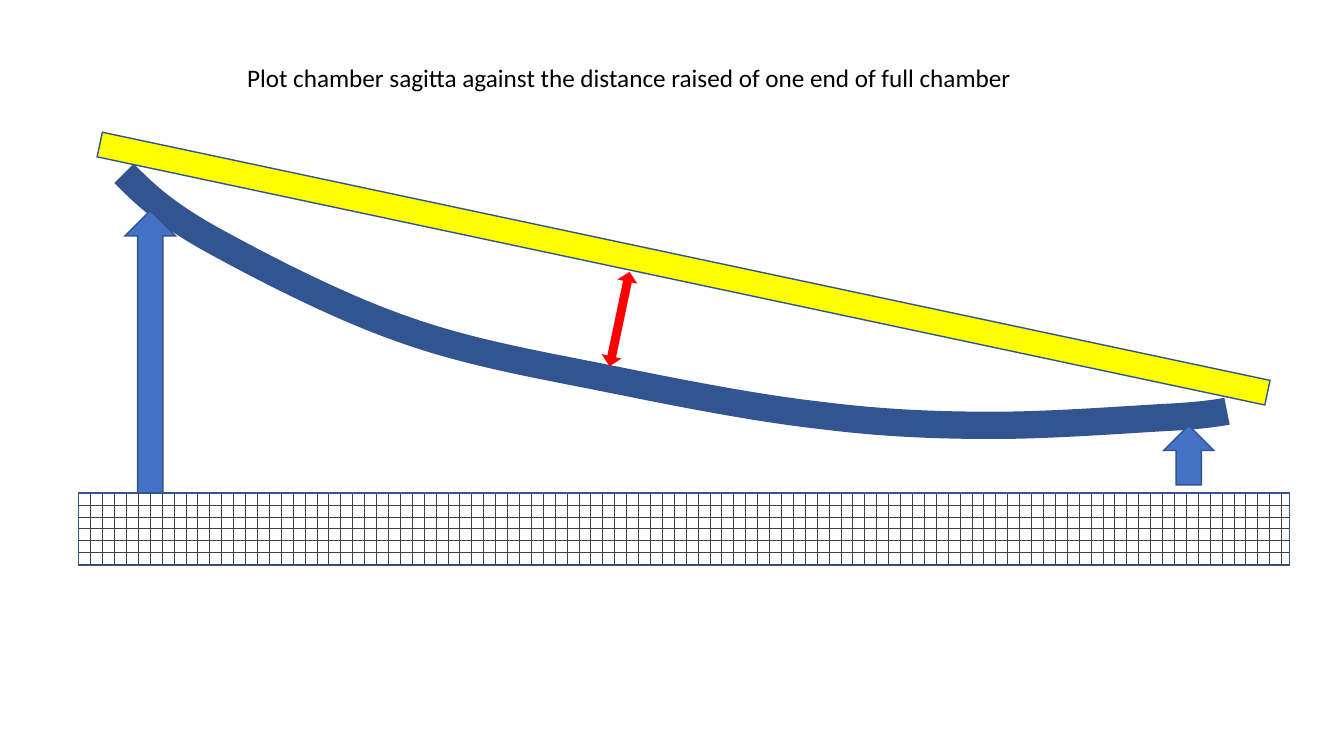
from dataclasses import dataclass

from lxml.etree import SubElement
from pptx import Presentation
from pptx.dml.color import RGBColor
from pptx.enum.dml import MSO_PATTERN
from pptx.enum.shapes import MSO_SHAPE
from pptx.enum.text import MSO_ANCHOR, MSO_AUTO_SIZE, PP_ALIGN
from pptx.oxml.ns import qn
from pptx.shapes.autoshape import Shape
from pptx.slide import Slide
from pptx.util import Inches, Pt

Point = tuple[float, float]


@dataclass(frozen=True)
class Theme:
    font: str = "Calibri"
    title_size: float = 18
    outline_width: float = 1
    gauge_width: float = 4.5
    chamber_width: float = 19.5
    text: RGBColor = RGBColor(0x00, 0x00, 0x00)
    outline: RGBColor = RGBColor(0x32, 0x54, 0x91)
    lift: RGBColor = RGBColor(0x44, 0x72, 0xC4)
    straightedge: RGBColor = RGBColor(0xFF, 0xFF, 0x00)
    gauge: RGBColor = RGBColor(0xFF, 0x00, 0x00)
    table_lines: RGBColor = RGBColor(0x40, 0x40, 0x40)
    table_ground: RGBColor = RGBColor(0xFF, 0xFF, 0xFF)


THEME = Theme()


@dataclass(frozen=True)
class Part:
    kind: MSO_SHAPE
    left: float
    top: float
    width: float
    height: float
    fill: RGBColor | None = None  # None gives the brick pattern
    rotation: float = 0
    line: RGBColor = THEME.outline
    line_width: float = THEME.outline_width


PARTS = [
    Part(MSO_SHAPE.DOWN_ARROW, 1.24, 2.09, 0.5, 3.09, THEME.lift, 180),
    Part(MSO_SHAPE.DOWN_ARROW, 11.54, 4.22, 0.5, 0.59, THEME.lift, 180),
    Part(MSO_SHAPE.RECTANGLE, 0.78, 4.89, 12.01, 0.72),
    Part(MSO_SHAPE.RECTANGLE, 0.86, 2.54, 11.84, 0.25, THEME.straightedge, 12),
    Part(MSO_SHAPE.LEFT_RIGHT_ARROW, 5.71, 3.14, 0.87, 0.05, THEME.gauge, 101.9,
         THEME.gauge, THEME.gauge_width),
]

CHAMBER_START: Point = (1.23, 1.72)
# Each row is one cubic curve: two control points, then the end point.
CHAMBER_CURVES: list[tuple[Point, Point, Point]] = [
    ((1.42, 1.91), (1.61, 2.1), (2.07, 2.36)),
    ((2.54, 2.62), (3.34, 3.04), (4.01, 3.27)),
    ((4.68, 3.51), (5.41, 3.63), (6.1, 3.77)),
    ((6.79, 3.91), (7.51, 4.05), (8.13, 4.12)),
    ((8.76, 4.2), (9.29, 4.22), (9.86, 4.22)),
    ((10.44, 4.22), (11.21, 4.16), (11.6, 4.14)),
    ((11.98, 4.12), (12.17, 4.08), (12.17, 4.08)),
]


def set_line(shape: Shape, color: RGBColor, width: float) -> None:
    """Give the shape a mitred outline and no shadow."""
    shape.shadow.inherit = False
    shape.line.color.rgb = color
    shape.line.width = Pt(width)
    outline = shape.element.spPr.find(qn("a:ln"))
    SubElement(outline, qn("a:miter"), lim="800000")


def bend_segments(shape: Shape) -> None:
    """Turn every three straight segments into one cubic curve."""
    outline = next(shape.element.iter(qn("a:path")))
    segments = outline.findall(qn("a:lnTo"))
    for index in range(0, len(segments), 3):
        curve = SubElement(outline, qn("a:cubicBezTo"))
        for segment in segments[index:index + 3]:
            curve.append(segment[0])
            outline.remove(segment)


def draw_chamber(page: Slide) -> None:
    start, *corners = [
        (Inches(x), Inches(y))
        for x, y in [CHAMBER_START, *(point for curve in CHAMBER_CURVES for point in curve)]
    ]
    builder = page.shapes.build_freeform(*start)
    builder.add_line_segments(corners, close=False)
    chamber = builder.convert_to_shape()
    bend_segments(chamber)
    chamber.fill.background()
    set_line(chamber, THEME.outline, THEME.chamber_width)


def draw_part(page: Slide, part: Part) -> None:
    shape = page.shapes.add_shape(part.kind, Inches(part.left), Inches(part.top),
                                  Inches(part.width), Inches(part.height))
    shape.rotation = part.rotation
    if part.fill is None:
        shape.fill.patterned()
        shape.fill.pattern = MSO_PATTERN.HORIZONTAL_BRICK
        shape.fill.fore_color.rgb = THEME.table_lines
        shape.fill.back_color.rgb = THEME.table_ground
    else:
        shape.fill.solid()
        shape.fill.fore_color.rgb = part.fill
    set_line(shape, part.line, part.line_width)


def write_title(page: Slide) -> None:
    title = page.shapes.title
    title.left, title.top = Inches(2.35), Inches(0.57)
    title.width, title.height = Inches(8.79), Inches(0.4)
    frame = title.text_frame
    frame.text = "Plot chamber sagitta against the distance raised of one end of full chamber"
    frame.word_wrap = True
    frame.auto_size = MSO_AUTO_SIZE.SHAPE_TO_FIT_TEXT
    frame.vertical_anchor = MSO_ANCHOR.TOP
    para = frame.paragraphs[0]
    para.alignment = PP_ALIGN.LEFT
    para.font.name = THEME.font
    para.font.size = Pt(THEME.title_size)
    para.font.color.rgb = THEME.text


def main() -> None:
    deck = Presentation()
    deck.slide_width, deck.slide_height = Inches(13.33), Inches(7.5)
    page = deck.slides.add_slide(deck.slide_layouts.get_by_name("Title Only"))
    write_title(page)
    draw_chamber(page)
    for part in PARTS:
        draw_part(page, part)
    deck.save("out.pptx")


if __name__ == "__main__":
    main()
